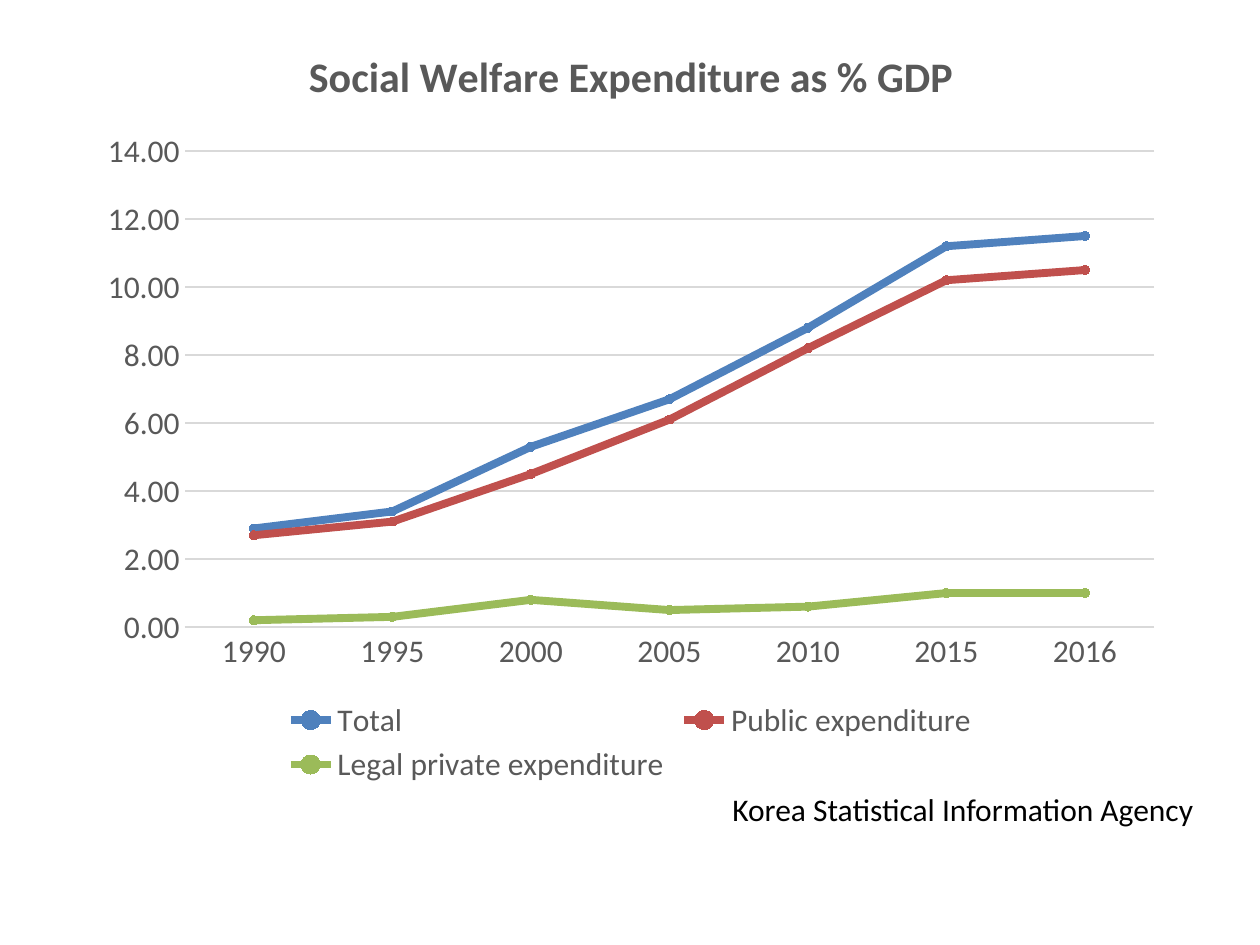
from dataclasses import dataclass

from pptx import Presentation
from pptx.chart.data import CategoryChartData
from pptx.dml.color import RGBColor
from pptx.enum.chart import XL_CHART_TYPE as ChartType
from pptx.enum.chart import XL_LEGEND_POSITION as LegendPosition
from pptx.enum.chart import XL_MARKER_STYLE as MarkerStyle
from pptx.enum.chart import XL_TICK_MARK as TickMark
from pptx.enum.text import MSO_AUTO_SIZE as AutoSize
from pptx.util import Pt

PX_PER_INCH = 126
EMU_PER_PX = 914400 / PX_PER_INCH


@dataclass(frozen=True)
class Theme:
    face: str = "Calibri"
    ink: str = "000000"
    muted: str = "595959"
    rule: str = "D9D9D9"
    title_size: int = 24
    body_size: int = 18
    rule_width: float = 0.75
    series_width: float = 4.5
    marker_size: int = 5


THEME = Theme()
YEARS = ["1990", "1995", "2000", "2005", "2010", "2015", "2016"]
SERIES = [
    ("Total", "4F81BD", [2.9, 3.4, 5.3, 6.7, 8.8, 11.2, 11.5]),
    ("Public expenditure", "C0504D", [2.7, 3.1, 4.5, 6.1, 8.2, 10.2, 10.5]),
    ("Legal private expenditure", "9BBB59", [0.2, 0.3, 0.8, 0.5, 0.6, 1, 1]),
]


def px(count):
    return round(count * EMU_PER_PX)


def apply_format(target, values):
    for name, value in values.items():
        setattr(target, name, value)


def style_font(font, size, color, bold=False):
    apply_format(font, {"name": THEME.face, "size": Pt(size), "bold": bold})
    font.color.rgb = RGBColor.from_string(color)


def style_line(line, color, width):
    line.color.rgb = RGBColor.from_string(color)
    line.width = Pt(width)


def style_title(chart, text):
    chart.has_title = True
    chart.chart_title.include_in_layout = False
    para = chart.chart_title.text_frame.paragraphs[0]
    span = para.add_run()
    span.text = text
    style_font(span.font, THEME.title_size, THEME.muted, bold=True)


def style_axes(chart):
    category, value = chart.category_axis, chart.value_axis
    for axis in (category, value):
        apply_format(axis, {"major_tick_mark": TickMark.NONE,
                            "minor_tick_mark": TickMark.NONE})
        style_font(axis.tick_labels.font, THEME.body_size, THEME.muted)
    style_line(category.format.line, THEME.rule, THEME.rule_width)
    value.format.line.fill.background()
    apply_format(value, {"has_major_gridlines": True, "minimum_scale": 0,
                         "maximum_scale": 14, "major_unit": 2})
    style_line(value.major_gridlines.format.line, THEME.rule, THEME.rule_width)
    apply_format(value.tick_labels, {"number_format": "#,##0.00",
                                     "number_format_is_linked": False})


def style_legend(chart):
    chart.has_legend = True
    apply_format(chart.legend, {"position": LegendPosition.BOTTOM,
                                "include_in_layout": False})
    style_font(chart.legend.font, THEME.body_size, THEME.muted)


def style_series(series, color):
    series.smooth = False
    style_line(series.format.line, color, THEME.series_width)
    apply_format(series.marker, {"style": MarkerStyle.CIRCLE,
                                 "size": THEME.marker_size})
    marker_format = series.marker.format
    marker_format.fill.solid()
    marker_format.fill.fore_color.rgb = RGBColor.from_string(color)
    style_line(marker_format.line, color, THEME.rule_width)


def add_line_chart(page, left, top, width, height, title):
    data = CategoryChartData(number_format="#,##0.00")
    data.categories = YEARS
    for name, _, values in SERIES:
        data.add_series(name, values)
    chart = page.shapes.add_chart(ChartType.LINE_MARKERS, px(left), px(top),
                                  px(width), px(height), data).chart
    style_font(chart.font, 10, THEME.ink)
    chart.plots[0].vary_by_categories = False
    style_title(chart, title)
    style_axes(chart)
    style_legend(chart)
    for series, (_, color, _) in zip(chart.plots[0].series, SERIES):
        style_series(series, color)


def add_caption(page, left, top, width, height, text):
    box = page.shapes.add_textbox(px(left), px(top), px(width), px(height))
    apply_format(box.text_frame, {"word_wrap": False,
                                  "auto_size": AutoSize.SHAPE_TO_FIT_TEXT})
    span = box.text_frame.paragraphs[0].add_run()
    span.text = text
    style_font(span.font, THEME.body_size, THEME.ink)


def main():
    deck = Presentation()
    apply_format(deck, {"slide_width": px(1260), "slide_height": px(945)})
    page = deck.slides.add_slide(deck.slide_layouts[6])
    add_line_chart(page, 86, 18, 1090, 772, "Social Welfare Expenditure as % GDP")
    add_caption(page, 720, 784, 491, 50, "Korea Statistical Information Agency")
    deck.save("out.pptx")


if __name__ == "__main__":
    main()
